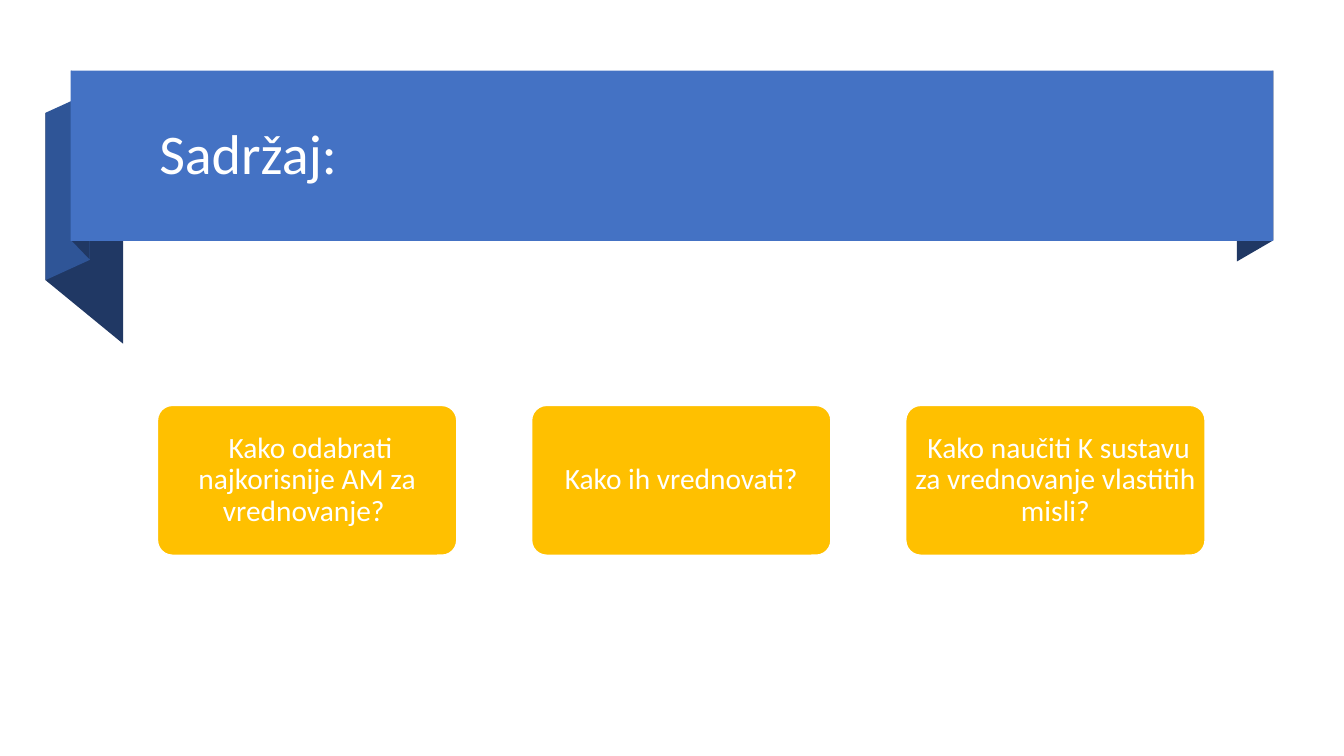
import pptx
import pptx.util
import pptx.dml.color
import pptx.enum.shapes
import pptx.enum.text

Pt = pptx.util.Pt
RGB = pptx.dml.color.RGBColor
SHAPE = pptx.enum.shapes.MSO_SHAPE
ALIGN = pptx.enum.text.PP_ALIGN
MIDDLE = pptx.enum.text.MSO_ANCHOR.MIDDLE

WHITE = RGB(0xFF, 0xFF, 0xFF)
BLUE = RGB(0x44, 0x72, 0xC4)
MID = RGB(0x2F, 0x55, 0x97)
NAVY = RGB(0x20, 0x38, 0x64)
GOLD = RGB(0xFF, 0xC0, 0x00)

TITLE = "Sadržaj:"
CARDS = [
    " Kako odabrati najkorisnije AM za vrednovanje? ",
    " Kako ih vrednovati? ",
    " Kako naučiti K sustavu za vrednovanje vlastitih misli?",
]


def paint(shape, color):
    shape.shadow.inherit = False
    shape.fill.solid()
    shape.fill.fore_color.rgb = color
    shape.line.fill.background()


def write(shape, text, size, align, pad):
    """Set white, vertically centred text with (side, top) insets."""
    frame = shape.text_frame
    side, top = pad
    layout = {
        "word_wrap": True, "vertical_anchor": MIDDLE,
        "margin_left": Pt(side), "margin_right": Pt(side),
        "margin_top": Pt(top), "margin_bottom": Pt(top),
    }
    for name, value in layout.items():
        setattr(frame, name, value)
    para = frame.paragraphs[0]
    para.text = text
    para.alignment = align
    para.line_spacing = 0.9
    style = {"name": "Calibri", "size": Pt(size)}
    for name, value in style.items():
        setattr(para.font, name, value)
    para.font.color.rgb = WHITE


def fold(slide, near, far, height, color):
    """Draw a ribbon fold between the tops of its near and far edges."""
    (ax, ay), (bx, by) = near, far
    start, *rest = [
        (Pt(x), Pt(y))
        for x, y in ((bx, by + height), (ax, ay + height), near, far)
    ]
    path = slide.shapes.build_freeform(*start, scale=1.0)
    path.add_line_segments(rest, close=True)
    paint(path.convert_to_shape(), color)


def banner(slide, left, top, width, height):
    folds = [
        ((width - 26, 15.1), (width, 0), 121.3, NAVY),
        ((-18, 30.2), (37.4, 75.6), 119.5, NAVY),
        ((-18, 30.2), (13.6, 15.8), 119.5, MID),
        ((0.5, 0), (13.6, 13.6), 121.3, NAVY),
    ]
    for (ax, ay), (bx, by), tall, color in folds:
        fold(slide, (left + ax, top + ay), (left + bx, top + by), tall, color)
    band = slide.shapes.add_shape(
        SHAPE.RECTANGLE, Pt(left), Pt(top), Pt(width), Pt(height))
    paint(band, BLUE)
    title = slide.shapes.add_textbox(
        Pt(left + 56.2), Pt(top + 9.4), Pt(width - 71.3), Pt(height - 17.3))
    write(title, TITLE, 40, ALIGN.LEFT, (7.2, 3.6))


def cards(slide, left, top, width, height):
    wide = 213.8
    step = (width - wide) / (len(CARDS) - 1)
    for index, text in enumerate(CARDS):
        card = slide.shapes.add_shape(
            SHAPE.ROUNDED_RECTANGLE,
            Pt(left + index * step), Pt(top), Pt(wide), Pt(height))
        card.adjustments[0] = 0.1
        paint(card, GOLD)
        card.line.color.rgb = WHITE
        card.line.width = Pt(1)
        write(card, text, 21, ALIGN.CENTER, (2.8, 2.2))


def main():
    deck = pptx.Presentation()
    deck.slide_width, deck.slide_height = Pt(960), Pt(540)
    slide = deck.slides.add_slide(deck.slide_layouts[6])
    banner(slide, 50.5, 50.4, 859, 121.7)
    cards(slide, 112.5, 289.6, 748.3, 107)
    deck.save("out.pptx")


if __name__ == "__main__":
    main()
